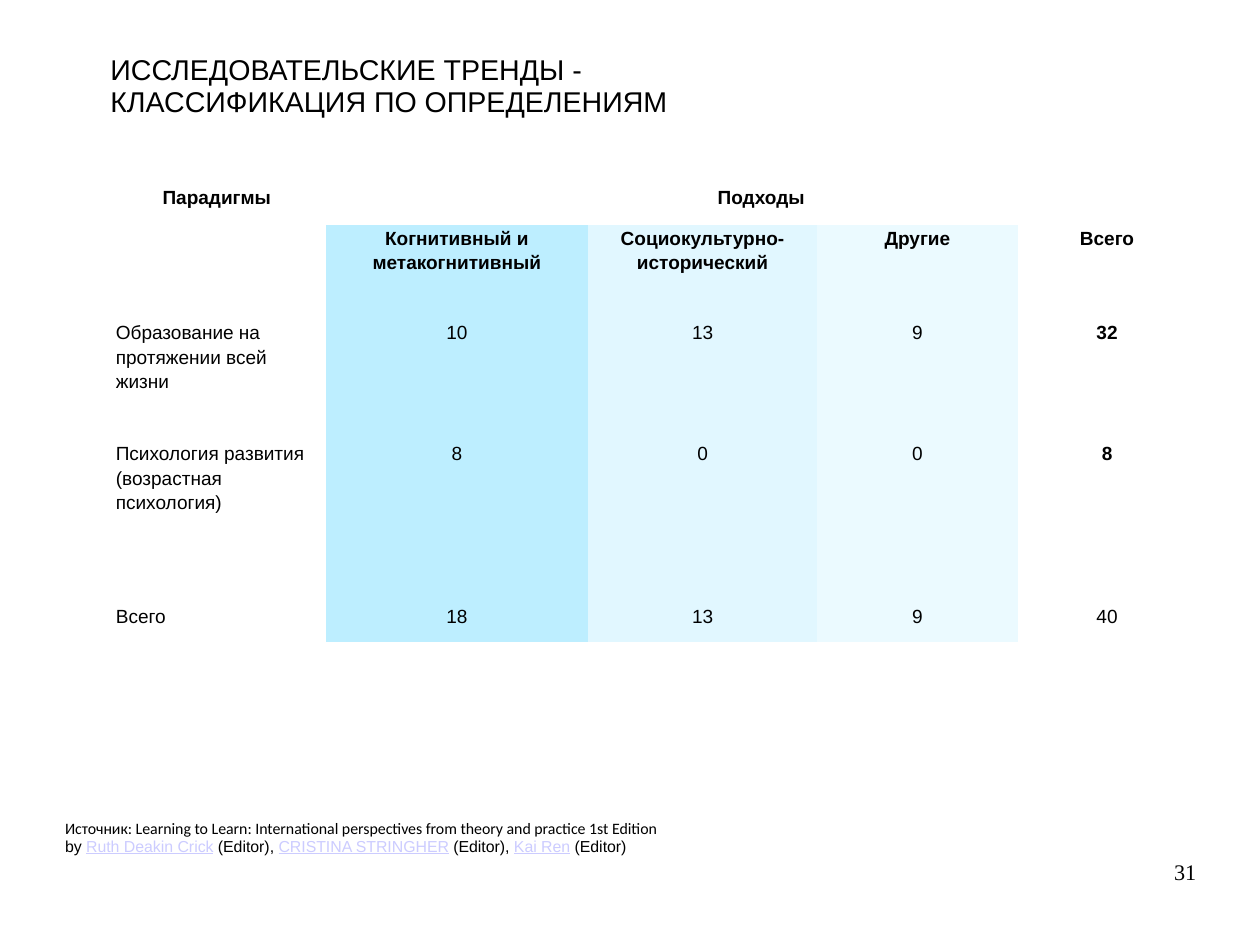
from pptx import Presentation
from pptx.dml.color import RGBColor
from pptx.enum.text import PP_ALIGN
from pptx.oxml.ns import qn
from pptx.util import Cm, Inches, Pt

COLOURS = {
    "text": "000000",
    "editor": "CCCCFF",
    "cognitive": "BDEEFF",
    "sociocultural": "E1F7FF",
    "other": "EBFAFF",
}
NO_STYLE_NO_GRID = "{2D5ABB26-0587-4C30-8999-92F81FD0307C}"

deck = Presentation()
deck.slide_width = Cm(28)
deck.slide_height = Cm(21)
slide = deck.slides.add_slide(deck.slide_layouts[6])


def place(left, top, width, height):
    across, down = deck.slide_width / 100, deck.slide_height / 100
    return [int(share * unit) for share, unit in
            zip((left, top, width, height), (across, down, across, down))]


def write(paragraph, text, font="Arial", size=12, bold=False, underline=False,
          colour="text", align=PP_ALIGN.LEFT, spacing=0.93):
    paragraph.alignment = align
    paragraph.line_spacing = spacing
    run = paragraph.add_run()
    run.text = text
    run.font.name = font
    run.font.size = Pt(size)
    run.font.bold = bold
    run.font.underline = underline
    run.font.color.rgb = RGBColor.from_string(COLOURS[colour])


column_shares = [17.3, 20.8, 18.2, 15.9, 14.2]
row_shares = [4.27, 10, 12.8, 17.2, 4.2]
column_fills = [None, "cognitive", "sociocultural", "other", None]
rows = [
    ["Парадигмы", "Подходы", "", "", ""],
    ["", "Когнитивный и метакогнитивный", "Социокультурно-исторический",
     "Другие", "Всего"],
    ["Образование на протяжении всей жизни", "10", "13", "9", "32"],
    ["Психология развития (возрастная психология)", "8", "0", "0", "8"],
    ["Всего", "18", "13", "9", "40"],
]

trends = slide.shapes.add_table(
    len(rows), len(column_shares),
    *place(8.56, 19.5, sum(column_shares), sum(row_shares))).table
trends.first_row = False
trends.horz_banding = False
trends._tbl.tblPr.find(qn("a:tableStyleId")).text = NO_STYLE_NO_GRID
for column, share in zip(trends.columns, column_shares):
    column.width = int(deck.slide_width * share / 100)
for row, share in zip(trends.rows, row_shares):
    row.height = int(deck.slide_height * share / 100)
trends.cell(0, 0).merge(trends.cell(1, 0))
trends.cell(0, 1).merge(trends.cell(0, 4))

for r, values in enumerate(rows):
    for c, value in enumerate(values):
        cell = trends.cell(r, c)
        cell.margin_left = cell.margin_right = Inches(0.07)
        cell.margin_top = cell.margin_bottom = 0
        if r > 0 and column_fills[c]:
            cell.fill.solid()
            cell.fill.fore_color.rgb = RGBColor.from_string(COLOURS[column_fills[c]])
        else:
            cell.fill.background()
        if value:
            is_header = r < 2
            is_total = c == 4 and r < 4
            align = PP_ALIGN.LEFT if c == 0 and not is_header else PP_ALIGN.CENTER
            write(cell.text_frame.paragraphs[0], value, bold=is_header or is_total,
                  align=align, spacing=1.15)

title = slide.shapes.add_textbox(*place(7.87, 5.2, 75.8, 8)).text_frame
title.word_wrap = True
write(title.paragraphs[0], "ИССЛЕДОВАТЕЛЬСКИЕ ТРЕНДЫ -", size=18)
write(title.add_paragraph(), "КЛАССИФИКАЦИЯ ПО ОПРЕДЕЛЕНИЯМ", size=18)

citation = slide.shapes.add_textbox(*place(4.27, 86.2, 50, 8.5)).text_frame
citation.word_wrap = True
write(citation.paragraphs[0],
      "Источник: Learning to Learn: International perspectives from theory "
      "and practice 1st Edition", font="Calibri", size=10)
editors = citation.add_paragraph()
lead = "by "
for editor in ["Ruth Deakin Crick", "CRISTINA STRINGHER", "Kai Ren"]:
    write(editors, lead, size=10)
    write(editors, editor, size=10, colour="editor", underline=True)
    lead = " (Editor), "
write(editors, " (Editor)", size=10)

page_number = slide.shapes.add_textbox(*place(71.65, 91.03, 23.3, 6.9)).text_frame
page_number.word_wrap = True
page_number.margin_left = page_number.margin_right = 0
page_number.margin_top = page_number.margin_bottom = 0
write(page_number.paragraphs[0], "31", font="Times New Roman", size=14,
      align=PP_ALIGN.RIGHT, spacing=0.95)

deck.save("out.pptx")
